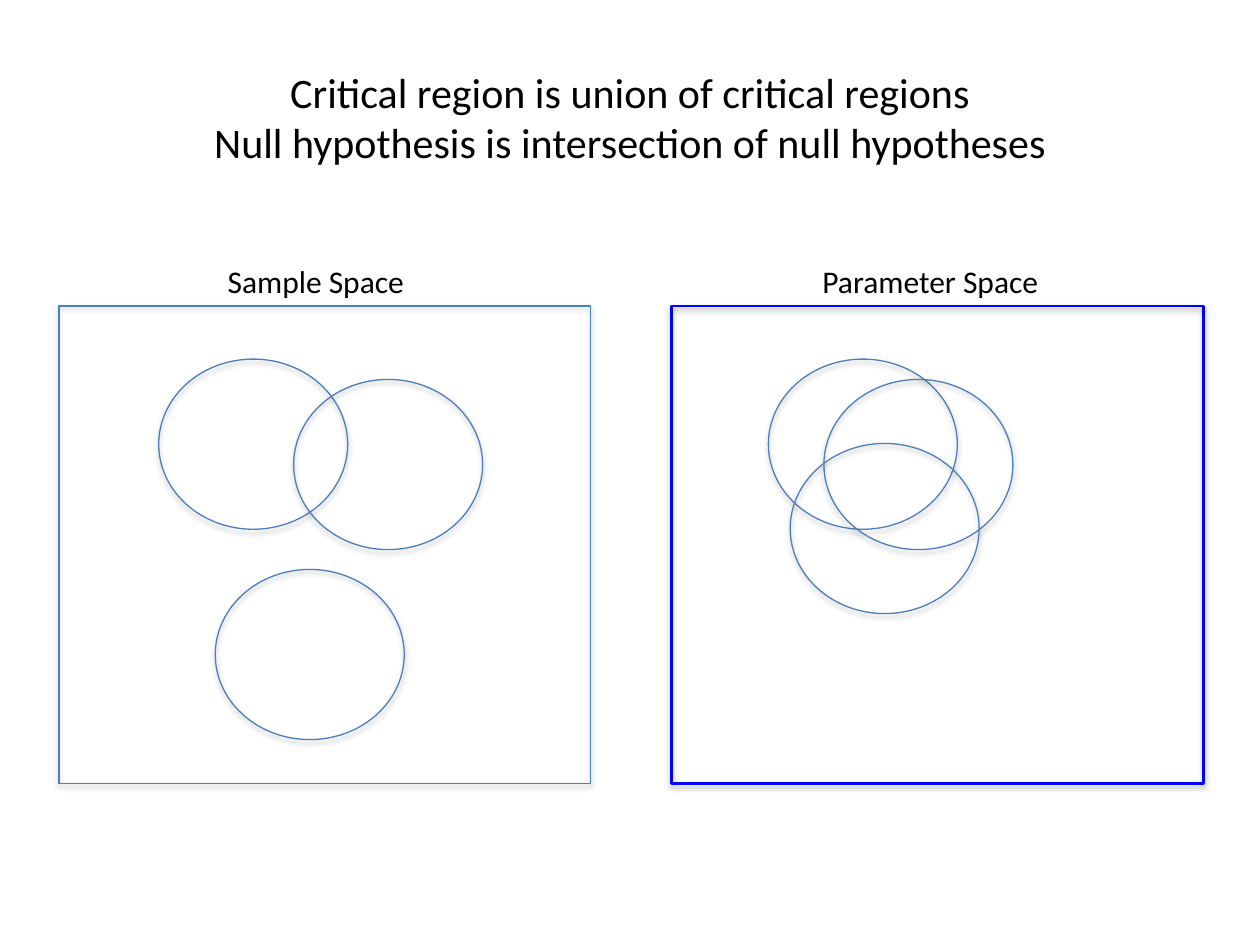
from lxml.etree import SubElement
from pptx import Presentation
from pptx.dml.color import RGBColor
from pptx.enum.shapes import MSO_SHAPE
from pptx.enum.text import MSO_ANCHOR, MSO_AUTO_SIZE, PP_ALIGN
from pptx.oxml.ns import qn
from pptx.util import Cm, Pt

BLUE = "4B7EBC"
REGION_SIZE = (3.81, 3.43)
SPACE_TOP, SPACE_SIZE = 6.17, (10.72, 9.63)
LABEL_TOP, LABEL_HEIGHT = 5.16, 1.02
SPACES = [
    {
        "label": "Sample Space", "label_left": 4.34, "label_width": 4.11,
        "left": 1.19, "color": BLUE, "line_width": 0.75,
        "regions": [(3.2, 7.24), (5.92, 7.65), (4.34, 11.48)],
    },
    {
        "label": "Parameter Space", "label_left": 16.33, "label_width": 4.9,
        "left": 13.54, "color": "0000FF", "line_width": 1.5,
        "regions": [(15.49, 7.24), (16.61, 7.65), (15.93, 8.94)],
    },
]


def rgb(color):
    """Turn a hex string into a colour."""
    return RGBColor.from_string(color)


def set_values(target, values):
    """Set each attribute named in values on the target."""
    for name, value in values.items():
        setattr(target, name, value)


def add_shadow(shape):
    """Give a shape a soft grey shadow that falls straight down."""
    shape.shadow.inherit = False
    effects = shape._element.spPr.find(qn("a:effectLst"))
    shadow = SubElement(effects, qn("a:outerShdw"), blurRad="40000", dist="23000",
                        dir="5400000", rotWithShape="0")
    black = SubElement(shadow, qn("a:srgbClr"), val="000000")
    SubElement(black, qn("a:alpha"), val="35000")


def add_outline(slide, kind, position, size, color, line_width):
    """Add an unfilled shape with a coloured outline and a shadow."""
    shape = slide.shapes.add_shape(kind, *map(Cm, position + size))
    shape.fill.background()
    shape.line.color.rgb = rgb(color)
    shape.line.width = Pt(line_width)
    add_shadow(shape)


def format_text(text_frame, size):
    """Set the font of every paragraph in a text frame."""
    for paragraph in text_frame.paragraphs:
        set_values(paragraph.font, {"name": "Calibri", "size": Pt(size)})
        paragraph.font.color.rgb = rgb("000000")


def add_label(slide, text, left, width):
    """Add the caption above a space."""
    box = slide.shapes.add_textbox(*map(Cm, (left, LABEL_TOP, width, LABEL_HEIGHT)))
    set_values(box.text_frame, {"text": text, "word_wrap": False,
                                "auto_size": MSO_AUTO_SIZE.SHAPE_TO_FIT_TEXT})
    format_text(box.text_frame, 18)


def fill_title(slide, text):
    """Place and format the slide title."""
    title = slide.shapes.title
    set_values(title, {"left": Cm(1.27), "top": Cm(0.76),
                       "width": Cm(22.86), "height": Cm(3.18)})
    set_values(title.text_frame, {"text": text, "vertical_anchor": MSO_ANCHOR.MIDDLE})
    title.text_frame.paragraphs[0].alignment = PP_ALIGN.CENTER
    format_text(title.text_frame, 24)


def add_space(slide, space):
    """Add a space with its regions, frame and label."""
    for position in space["regions"]:
        add_outline(slide, MSO_SHAPE.OVAL, position, REGION_SIZE, BLUE, 0.75)
    add_outline(slide, MSO_SHAPE.RECTANGLE, (space["left"], SPACE_TOP), SPACE_SIZE,
                space["color"], space["line_width"])
    add_label(slide, space["label"], space["label_left"], space["label_width"])


def main():
    """Build and save the presentation."""
    presentation = Presentation()
    set_values(presentation, {"slide_width": Cm(25.4), "slide_height": Cm(19.05)})
    slide = presentation.slides.add_slide(presentation.slide_layouts[5])
    fill_title(slide, "Critical region is union of critical regions\v"
                      "Null hypothesis is intersection of null hypotheses")
    for space in SPACES:
        add_space(slide, space)
    presentation.save("out.pptx")


if __name__ == "__main__":
    main()
